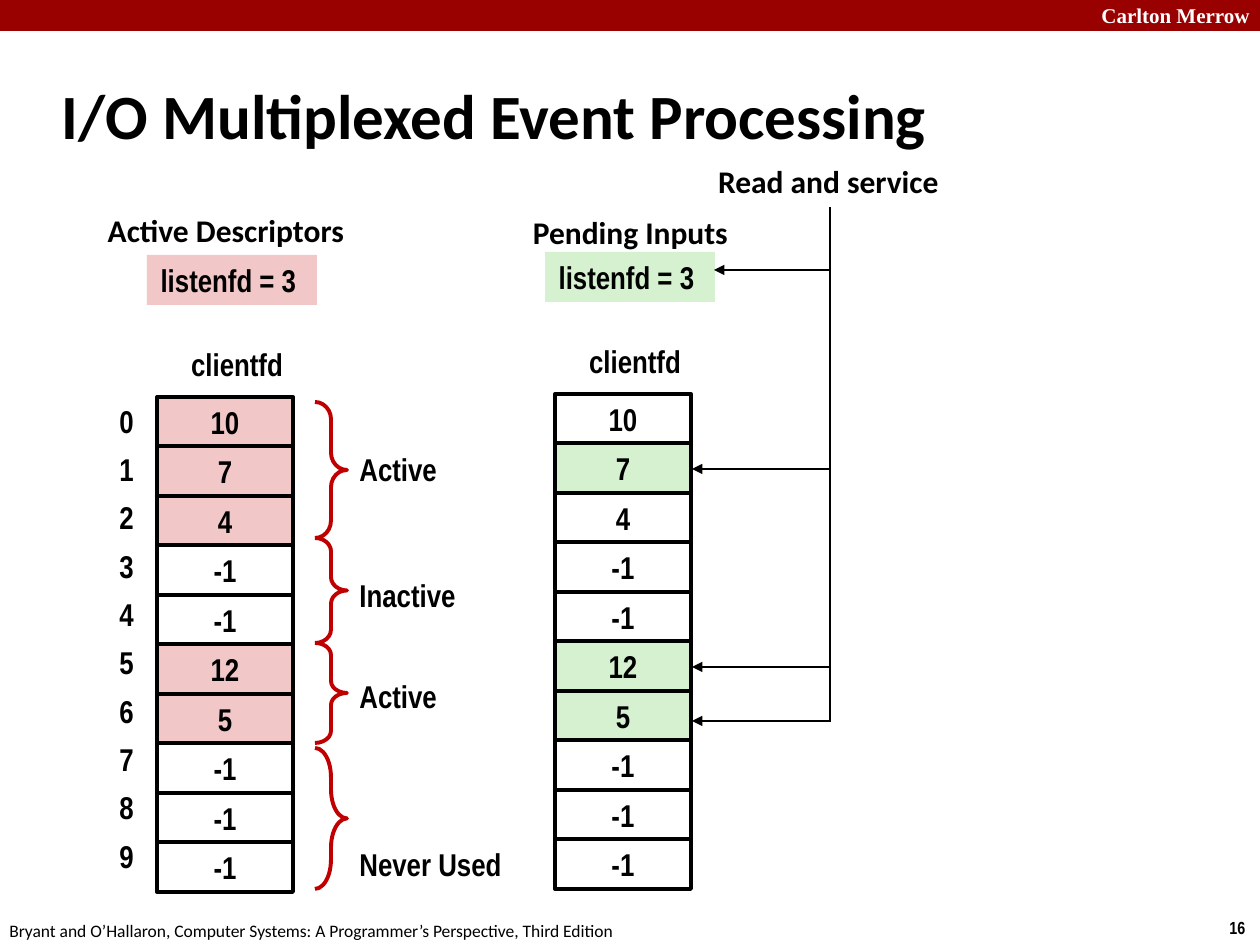
from lxml.etree import SubElement
from pptx import Presentation
from pptx.dml.color import RGBColor
from pptx.enum.shapes import MSO_CONNECTOR as Link, MSO_SHAPE as Shape
from pptx.enum.text import MSO_ANCHOR as Anchor, PP_ALIGN as Align
from pptx.oxml.ns import qn
from pptx.util import Pt

SCALE = 914400 / 126
NARROW, SANS, SERIF = "Arial Narrow", "Calibri", "Times New Roman"
BLACK, WHITE, PINK, GREEN = "000000", "FFFFFF", "F1C7C7", "D5F1CF"
BAR, BRACE = "990000", "C00000"
VALUES = [10, 7, 4, -1, -1, 12, 5, -1, -1, -1]
GROUPS = [
    ("Active", 402, 136, 0.542, 444),
    ("Inactive", 538, 105, 0.417, 570),
    ("Active", 643, 100, 0.375, 671),
    ("Never Used", 748, 141, 0.917, 839),
]


def px(*nums):
    """Turn pixel lengths into a list of EMU."""
    return [round(n * SCALE) for n in nums]


def paint(target, color):
    """Give a fill or font colour from a hex string."""
    target.rgb = RGBColor.from_string(color)


def write(shape, text, size=18, font=NARROW, color=BLACK, bold=True,
          align=Align.LEFT, anchor=Anchor.TOP, wrap=False):
    """Put formatted text into a shape."""
    frame = shape.text_frame
    frame.word_wrap = wrap
    frame.vertical_anchor = anchor
    para = frame.paragraphs[0]
    para.alignment = align
    run = para.add_run()
    run.text = text
    run.font.size = Pt(size)
    run.font.name = font
    run.font.bold = bold
    paint(run.font.color, color)


def label(slide, text, box, **style):
    """Add a text box."""
    write(slide.shapes.add_textbox(*px(*box)), text, **style)


def block(slide, box, fill=None, line=None, kind=Shape.RECTANGLE):
    """Add a preset shape with optional fill and outline."""
    shape = slide.shapes.add_shape(kind, *px(*box))
    shape.shadow.inherit = False
    if fill:
        shape.fill.solid()
        paint(shape.fill.fore_color, fill)
    else:
        shape.fill.background()
    if line:
        paint(shape.line.color, line)
        shape.line.width = Pt(2.25)
    else:
        shape.line.fill.background()
    return shape


def link(slide, start, end, arrow=True):
    """Add a straight line, with an arrowhead at its end if asked."""
    line = slide.shapes.add_connector(Link.STRAIGHT, *px(*start, *end))
    paint(line.line.color, BLACK)
    line.line.width = Pt(1.5)
    props = line._element.spPr
    if arrow:
        SubElement(props.find(qn("a:ln")), qn("a:tailEnd"), type="triangle")
    SubElement(props, qn("a:effectLst"))


def table(slide, left, top, fill, marked):
    """Draw the listening descriptor and the array of client descriptors."""
    head = block(slide, (left - 10, top - 142, 170, 50), fill)
    write(head, "listenfd = 3 ", align=Align.CENTER)
    label(slide, "clientfd", (left + 21, top - 58, 118, 50), align=Align.CENTER)
    for i, value in enumerate(VALUES):
        cell = block(slide, (left, top + i * 99 // 2, 136, 50),
                     fill if i in marked else WHITE, BLACK)
        write(cell, str(value), align=Align.CENTER, anchor=Anchor.MIDDLE, wrap=True)


def groups(slide):
    """Number the slots and brace them by state."""
    for i in range(len(VALUES)):
        label(slide, str(i), (10, 396 + i * 145 // 3, 136, 50),
              align=Align.RIGHT, anchor=Anchor.MIDDLE, wrap=True)
    for name, top, high, curve, mid in GROUPS:
        brace = block(slide, (315, top, 32, high), line=BRACE, kind=Shape.RIGHT_BRACE)
        brace.adjustments[0] = curve
        label(slide, name, (347, mid, 168, 50))


def arrows(slide):
    """Lead from the service label to each pending input."""
    for tip, y in [(714, 270), (692, 469), (692, 667), (692, 721)]:
        link(slide, (830, y), (tip, y))
    link(slide, (830, 722), (830, 207), arrow=False)


def frame(slide):
    """Add the top bar, footer and title."""
    block(slide, (0, 0, 1260, 31), BAR)
    label(slide, "Carlton Merrow", (1089, -4, 180, 38),
          size=12, font=SERIF, color=WHITE, wrap=True)
    label(slide, "16", (1217, 911, 43, 34), size=10)
    label(slide, "Bryant and O’Hallaron, Computer Systems: A Programmer’s Perspective, "
          "Third Edition", (-3, 914, 640, 34), size=10, font=SANS, bold=False)
    title = slide.shapes.title
    title.left, title.top, title.width, title.height = px(49, 62, 1046, 105)
    write(title, "I/O Multiplexed Event Processing", size=36, font=SANS,
          anchor=Anchor.MIDDLE, wrap=True)


def main():
    """Build and save the slide."""
    deck = Presentation()
    deck.slide_width, deck.slide_height = px(1260, 945)
    slide = deck.slides.add_slide(deck.slide_layouts[5])
    frame(slide)
    table(slide, 157, 397, PINK, {0, 1, 2, 5, 6})
    groups(slide)
    table(slide, 555, 394, GREEN, {1, 5, 6})
    for text, box in [("Active Descriptors", (94, 205, 264, 50)),
                      ("Pending Inputs", (493, 207, 275, 50)),
                      ("Read and service", (691, 156, 275, 50))]:
        label(slide, text, box, font=SANS, align=Align.CENTER)
    arrows(slide)
    deck.save("out.pptx")


if __name__ == "__main__":
    main()
